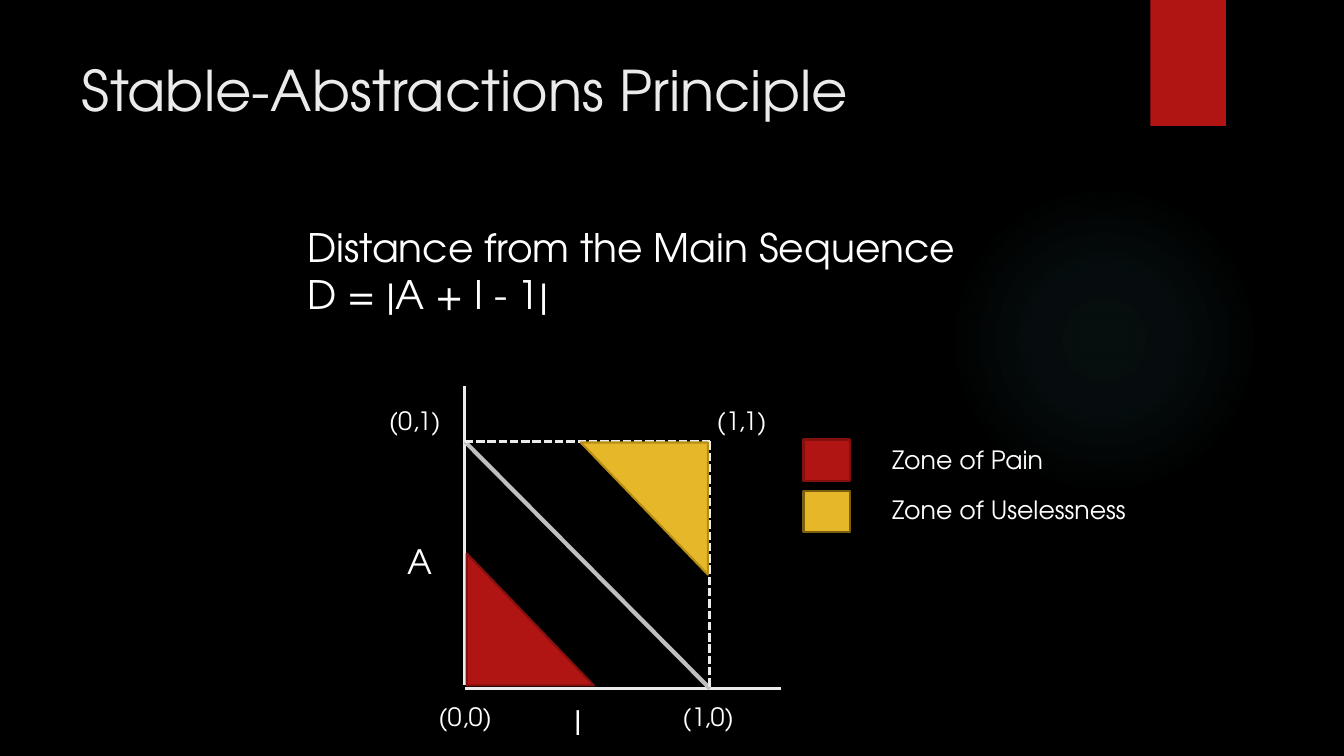
"""Builds the Stable-Abstractions Principle slide with its A/I zone diagram."""
from lxml import etree
from pptx import Presentation
from pptx.dml.color import RGBColor
from pptx.enum.dml import MSO_LINE
from pptx.enum.shapes import MSO_CONNECTOR, MSO_SHAPE
from pptx.oxml import parse_xml
from pptx.oxml.ns import qn
from pptx.util import Inches, Pt

FONT = "TeX Gyre Adventor"
RECTANGLE = MSO_SHAPE.RECTANGLE
TRIANGLE = MSO_SHAPE.RIGHT_TRIANGLE
STRAIGHT = MSO_CONNECTOR.STRAIGHT
DASH = MSO_LINE.SQUARE_DOT
RED, YELLOW, WHITE, PALE = "B01513", "E6B729", "FFFFFF", "EBEBEB"
DARK_RED = "82100E"
LEFT, RIGHT, TOP, BOTTOM = 4.61, 7.04, 4.38, 6.83


def color(value):
    return RGBColor.from_string(value)


def add_block(kind, box, fill, outline=None):
    shape = slide.shapes.add_shape(kind, *map(Inches, box))
    shape.shadow.inherit = False
    shape.fill.solid()
    shape.fill.fore_color.rgb = color(fill)
    if outline:
        shape.line.color.rgb = color(outline)
        shape.line.width = Pt(1.5)
    else:
        shape.line.fill.background()
    return shape


presentation = Presentation()
presentation.slide_width = Inches(13.33)
presentation.slide_height = Inches(7.5)
slide = presentation.slides.add_slide(presentation.slide_layouts[6])
slide.background.fill.solid()
slide.background.fill.fore_color.rgb = color("000000")

glow = add_block(MSO_SHAPE.OVAL, (9.41, 1.83, 3.08, 3.08), "50B9C1")
stops = "".join(
    f'<a:gs pos="{position}000"><a:srgbClr val="50B9C1"><a:alpha val="{alpha}000"/></a:srgbClr></a:gs>'
    for position, alpha in ((0, 7), (36, 6), (69, 0))
)
gradient = parse_xml(
    '<a:gradFill xmlns:a="http://schemas.openxmlformats.org/drawingml/2006/main">'
    f"<a:gsLst>{stops}</a:gsLst>"
    '<a:path path="circle"><a:fillToRect l="50000" t="50000" r="50000" b="50000"/></a:path>'
    "</a:gradFill>"
)
properties = glow.element.spPr
properties.replace(properties.find(qn("a:solidFill")), gradient)

add_block(RECTANGLE, (11.41, 0, 0.75, 1.25), RED)

lines = [
    (LEFT, 3.83, LEFT, 6.8, PALE, 2, None),
    (LEFT, BOTTOM, 7.75, BOTTOM, PALE, 2, None),
    (LEFT, TOP, RIGHT, BOTTOM, "BFBFBF", 3, None),
    (LEFT, TOP, RIGHT, TOP, PALE, 2, DASH),
    (RIGHT, TOP, RIGHT, BOTTOM, PALE, 2, DASH),
]
for *ends, line_color, width, dash in lines:
    connector = slide.shapes.add_connector(STRAIGHT, *map(Inches, ends))
    connector.line.color.rgb = color(line_color)
    connector.line.width = Pt(width)
    if dash:
        connector.line.dash_style = dash
    etree.SubElement(connector.element.spPr, qn("a:effectLst"))

add_block(TRIANGLE, (4.63, 5.49, 1.26, 1.31), RED, DARK_RED)
useless_zone = add_block(TRIANGLE, (5.76, 4.39, 1.26, 1.31), YELLOW, "B68E15")
useless_zone.rotation = 180
add_block(RECTANGLE, (7.97, 4.36, 0.46, 0.41), RED, DARK_RED)
add_block(RECTANGLE, (7.97, 4.87, 0.46, 0.41), YELLOW, "795F0E")

texts = [
    (["Stable-Abstractions Principle"], (0.71, 0.5, 10.29, 1.53), 40, PALE),
    (["Distance from the Main Sequence", "D = |A + I - 1|"], (2.95, 2.17, 6.78, 1.04), 28, WHITE),
    (["A"], (3.94, 5.32, 0.45, 0.5), 24, WHITE),
    (["I"], (5.6, 6.91, 0.28, 0.5), 24, WHITE),
    (["(1,1)"], (7.01, 3.97, 0.74, 0.4), 18, WHITE),
    (["(1,0)"], (6.67, 6.91, 0.74, 0.4), 18, WHITE),
    (["(0,0)"], (4.25, 6.91, 0.74, 0.4), 18, WHITE),
    (["(0,1)"], (3.76, 3.97, 0.74, 0.4), 18, WHITE),
    (["Zone of Pain"], (8.75, 4.36, 1.82, 0.4), 18, WHITE),
    (["Zone of Uselessness"], (8.75, 4.86, 2.75, 0.4), 18, WHITE),
]
for content, box, size, text_color in texts:
    frame = slide.shapes.add_textbox(*map(Inches, box)).text_frame
    frame.word_wrap = box[2] > 1
    frame.text = "\n".join(content)
    for paragraph in frame.paragraphs:
        paragraph.font.name = FONT
        paragraph.font.size = Pt(size)
        paragraph.font.color.rgb = color(text_color)

presentation.save("out.pptx")
